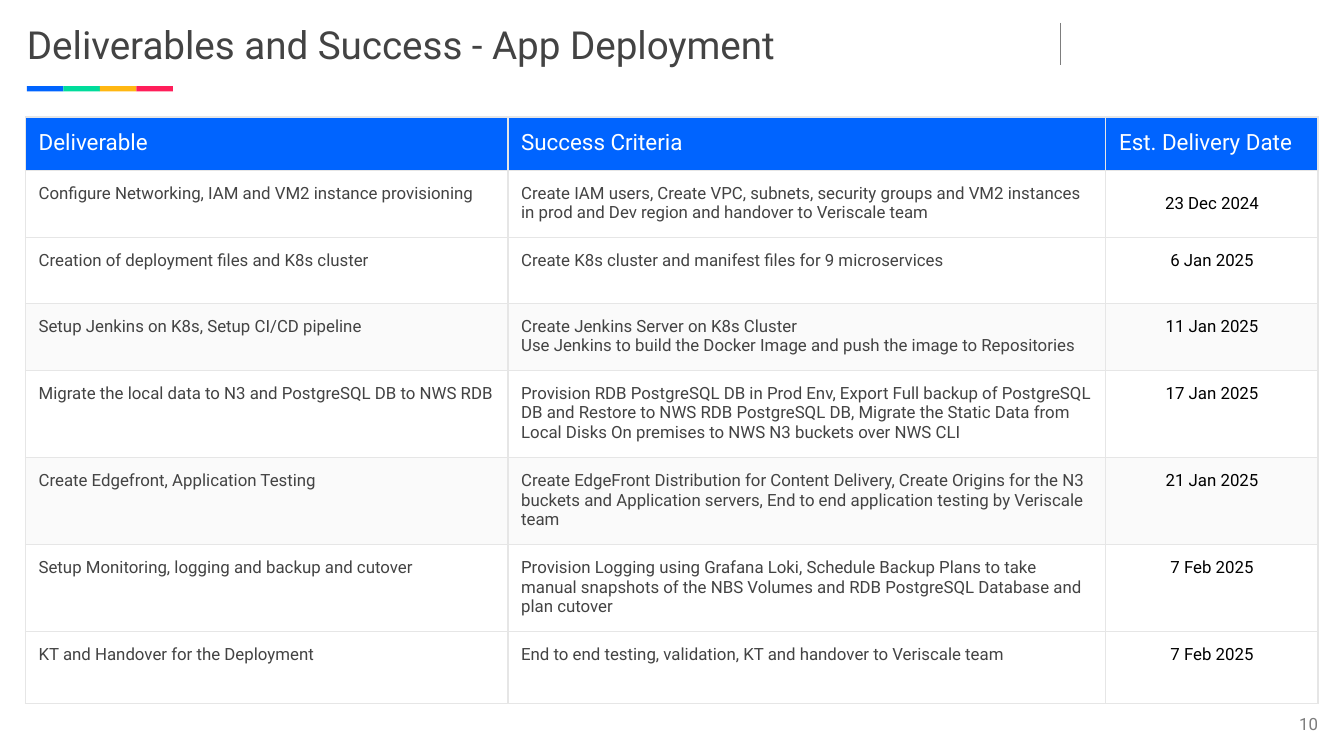
import pptx
import pptx.dml.color
import pptx.enum.shapes
import pptx.enum.text
import pptx.oxml.ns
import pptx.util
from dataclasses import dataclass
from lxml import etree

Cm, Pt = pptx.util.Cm, pptx.util.Pt
RGBColor = pptx.dml.color.RGBColor
Align = pptx.enum.text.PP_ALIGN
Anchor = pptx.enum.text.MSO_ANCHOR
qn = pptx.oxml.ns.qn


@dataclass(frozen=True)
class Theme:
    font: str = "Roboto"
    text: str = "434343"
    date: str = "000000"
    muted: str = "7D7D7D"
    white: str = "FFFFFF"
    border: str = "E6E6E6"
    accents: tuple = ("0064FF", "00DC9B", "FFB712", "FF1E5A")
    title_size: float = 20.7
    header_size: float = 12
    body_size: float = 9


theme = Theme()


def style(paragraph, size, color, alignment=Align.LEFT):
    paragraph.alignment = alignment
    paragraph.font.name = theme.font
    paragraph.font.size = Pt(size)
    paragraph.font.bold = False
    paragraph.font.color.rgb = RGBColor.from_string(color)


def add_borders(cell):
    properties = cell._tc.get_or_add_tcPr()
    for side in ("lnL", "lnR", "lnT", "lnB"):
        line = etree.SubElement(properties, qn(f"a:{side}"), w=str(Pt(0.75)))
        fill = etree.SubElement(line, qn("a:solidFill"))
        etree.SubElement(fill, qn("a:srgbClr"), val=theme.border)


presentation = pptx.Presentation()
presentation.slide_width, presentation.slide_height = Cm(25.4), Cm(14.29)
slide = presentation.slides.add_slide(presentation.slide_layouts[5])

# Vertical rule beside the title
rule = slide.shapes.add_connector(
    pptx.enum.shapes.MSO_CONNECTOR.STRAIGHT, Cm(20.04), Cm(0.43), Cm(20.04), Cm(1.22))
rule.line.color.rgb = RGBColor.from_string(theme.muted)
rule.line.width = Pt(0.75)
etree.SubElement(rule._element.spPr, qn("a:effectLst"))

# Four-colour bar
for index, color in enumerate(theme.accents):
    bar = slide.shapes.add_shape(
        pptx.enum.shapes.MSO_SHAPE.RECTANGLE,
        Cm(0.51 + 0.69 * index), Cm(1.63), Cm(0.69), Cm(0.1))
    bar.shadow.inherit = False
    bar.fill.solid()
    bar.fill.fore_color.rgb = RGBColor.from_string(color)
    bar.line.fill.background()

# Slide number
number = slide.shapes.add_textbox(Cm(23.39), Cm(13.23), Cm(1.52), Cm(0.64))
frame = number.text_frame
frame.margin_left = frame.margin_right = frame.margin_top = frame.margin_bottom = 0
frame.word_wrap = True
frame.vertical_anchor = Anchor.BOTTOM
frame.text = "10"
frame.paragraphs[0].line_spacing = 0.9
style(frame.paragraphs[0], theme.body_size, theme.muted, Align.RIGHT)

# Title
title = slide.shapes.title
title.left, title.top, title.width, title.height = Cm(0), Cm(-0.05), Cm(16.38), Cm(1.78)
frame = title.text_frame
frame.text = "Deliverables and Success - App Deployment"
frame.auto_size = pptx.enum.text.MSO_AUTO_SIZE.NONE
frame.vertical_anchor = Anchor.MIDDLE
frame.margin_left = Cm(0.51)
frame.margin_right = frame.margin_top = frame.margin_bottom = Cm(0.25)
style(frame.paragraphs[0], theme.title_size, theme.text)

# Deliverables: three texts per row
rows = [
    ("Deliverable", "Success Criteria", "Est. Delivery Date"),
    ("Configure Networking, IAM and VM2 instance provisioning",
     "Create IAM users, Create VPC, subnets, security groups and VM2 instances in prod "
     "and Dev region and handover to Veriscale team",
     "23 Dec 2024"),
    ("Creation of deployment files and K8s cluster",
     "Create K8s cluster and manifest files for 9 microservices",
     "6 Jan 2025"),
    ("Setup Jenkins on K8s, Setup CI/CD pipeline",
     "Create Jenkins Server on K8s Cluster\n"
     "Use Jenkins to build the Docker Image and push the image to Repositories",
     "11 Jan 2025"),
    ("Migrate the local data to N3 and PostgreSQL DB to NWS RDB",
     "Provision RDB PostgreSQL DB in Prod Env, Export Full backup of PostgreSQL DB and "
     "Restore to NWS RDB PostgreSQL DB, Migrate the Static Data from Local Disks On "
     "premises to NWS N3 buckets over NWS CLI",
     "17 Jan 2025"),
    ("Create Edgefront, Application Testing",
     "Create EdgeFront Distribution for Content Delivery, Create Origins for the N3 "
     "buckets and Application servers, End to end application testing by Veriscale team",
     "21 Jan 2025"),
    ("Setup Monitoring, logging and backup and cutover",
     "Provision Logging using Grafana Loki, Schedule Backup Plans to take manual "
     "snapshots of the NBS Volumes and RDB PostgreSQL Database and plan cutover",
     "7 Feb 2025"),
    ("KT and Handover for the Deployment",
     "End to end testing, validation, KT and handover to Veriscale team",
     "7 Feb 2025"),
]
column_widths = (9.12, 11.3, 4.01)
row_heights = (1, 1.25, 1.25, 1.25, 1.63, 1.63, 1.63, 1.36)
shaded_rows = (3, 5)

# Table
table = slide.shapes.add_table(
    len(rows), len(column_widths), Cm(0.48), Cm(2.21),
    Cm(sum(column_widths)), Cm(sum(row_heights))).table
table.first_row = table.horz_banding = False
for column, width in zip(table.columns, column_widths):
    column.width = Cm(width)
for row, height in zip(table.rows, row_heights):
    row.height = Cm(height)

for row_index, texts in enumerate(rows):
    for column_index, text in enumerate(texts):
        cell = table.cell(row_index, column_index)
        cell.text = text
        cell.margin_left = cell.margin_right = Cm(0.25)
        cell.margin_top = cell.margin_bottom = Cm(0.25)
        add_borders(cell)

        cell.fill.solid()
        if row_index == 0:
            fill = theme.accents[0]
        else:
            fill = theme.border if row_index in shaded_rows else theme.white
        cell.fill.fore_color.rgb = RGBColor.from_string(fill)
        if row_index in shaded_rows:
            color_element = cell._tc.tcPr.find(qn("a:solidFill"))[0]
            etree.SubElement(color_element, qn("a:alpha"), val="18000")

        for paragraph in cell.text_frame.paragraphs:
            if row_index == 0:
                style(paragraph, theme.header_size, theme.white)
            elif column_index == 2:
                style(paragraph, theme.body_size, theme.date, Align.CENTER)
            else:
                style(paragraph, theme.body_size, theme.text)

# The first date sits midway in its row
table.cell(1, 2).vertical_anchor = Anchor.MIDDLE

presentation.save("out.pptx")
